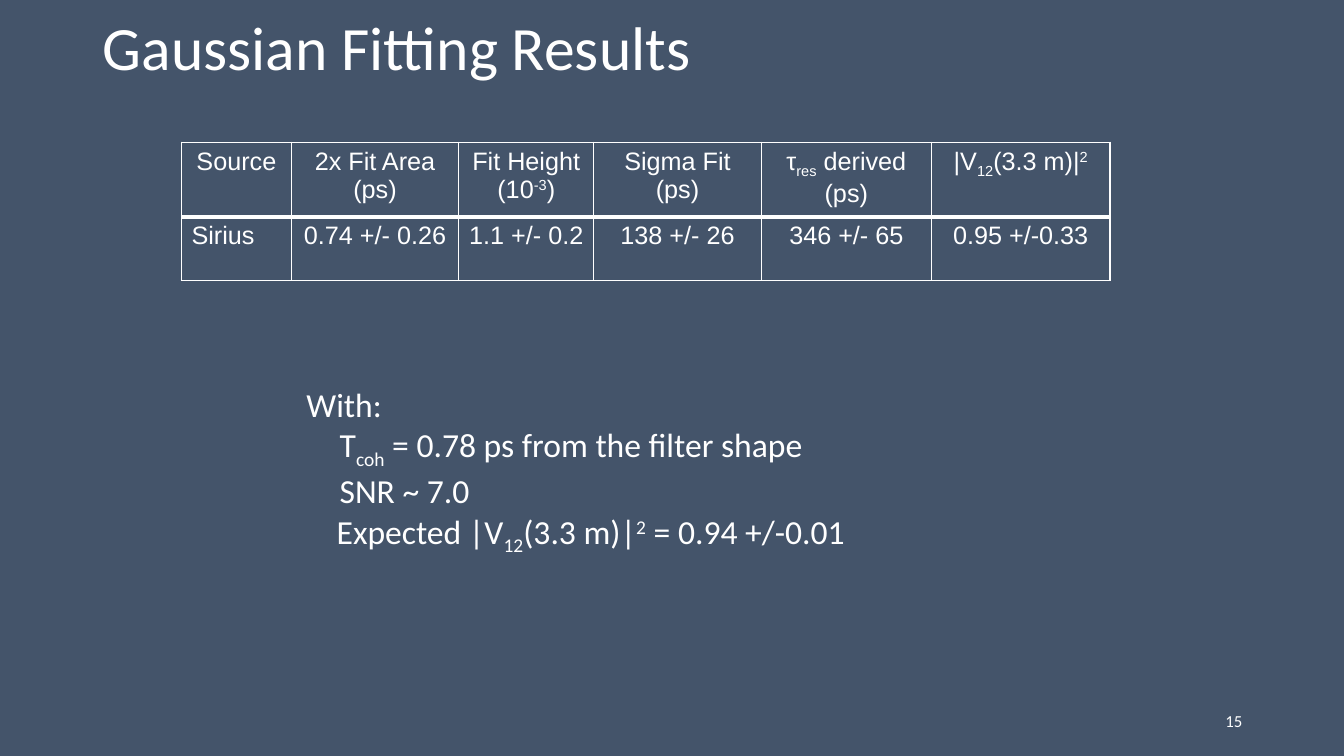
from lxml.etree import SubElement, fromstring
from pptx import Presentation
from pptx.dml.color import RGBColor
from pptx.enum.text import MSO_ANCHOR as Anchor, PP_ALIGN as Align
from pptx.oxml.ns import qn
from pptx.util import Inches, Pt

WHITE = "FFFFFF"
SUB, SUPER = -25000, 30000
VISIBILITY = ["|V", ("12", SUB), "(3.3 m)|", ("2", SUPER)]


def color(value):
    return RGBColor.from_string(value)


def write(paragraph, text, size=18, font="Calibri", align=Align.LEFT, indent=0, spacing=None):
    paragraph.alignment = align
    paragraph.line_spacing = spacing
    if indent:
        properties = paragraph._p.get_or_add_pPr()
        properties.set("marL", str(Inches(indent)))
        properties.set("indent", "0")
    for part in [text] if isinstance(text, str) else text:
        content, baseline = (part, 0) if isinstance(part, str) else part
        run = paragraph.add_run()
        run.text = content
        run.font.size = Pt(size)
        run.font.name = font
        run.font.bold = False
        run.font.color.rgb = color(WHITE)
        if baseline:
            run.font._element.set("baseline", str(baseline))


class ResultsSlide:
    def __init__(self, presentation, background):
        self.slide = presentation.slides.add_slide(presentation.slide_layouts[5])
        fill = self.slide.background.fill
        fill.solid()
        fill.fore_color.rgb = color(background)

    def title(self, text, left, top, width, height):
        shape = self.slide.shapes.title
        shape.left, shape.top = Inches(left), Inches(top)
        shape.width, shape.height = Inches(width), Inches(height)
        shape.text_frame.vertical_anchor = Anchor.MIDDLE
        write(shape.text_frame.paragraphs[0], text, size=44, spacing=0.9)

    def text(self, lines, left, top, width, height, anchor=Anchor.TOP, **style):
        box = self.slide.shapes.add_textbox(
            Inches(left), Inches(top), Inches(width), Inches(height))
        frame = box.text_frame
        frame.word_wrap = True
        frame.vertical_anchor = anchor
        for index, (line, indent) in enumerate(lines):
            paragraph = frame.add_paragraph() if index else frame.paragraphs[0]
            write(paragraph, line, indent=indent, **style)

    def borders(self, cell, **widths):
        properties = cell._tc.get_or_add_tcPr()
        for index, side in enumerate("LRTB"):
            line = properties.makeelement(
                qn(f"a:ln{side}"), {"w": str(Pt(widths.get(side, 1)))})
            fill = SubElement(line, qn("a:solidFill"))
            SubElement(fill, qn("a:srgbClr"), val=WHITE)
            properties.insert(index, line)

    def table(self, rows, left, top, widths, heights):
        table = self.slide.shapes.add_table(
            len(rows), len(widths), Inches(left), Inches(top),
            Inches(sum(widths)), Inches(sum(heights))).table
        table.first_row = table.horz_banding = False
        for column, width in zip(table.columns, widths):
            column.width = Inches(width)
        for row, height in zip(table.rows, heights):
            row.height = Inches(height)
        for row_index, row in enumerate(rows):
            for column_index, text in enumerate(row):
                cell = table.cell(row_index, column_index)
                cell.fill.background()
                self.borders(cell, **({"T": 3} if row_index else {"B": 3}))
                align = Align.LEFT if text == "Sirius" else Align.CENTER
                write(cell.text_frame.paragraphs[0], text, font="Arial", align=align)


def main():
    presentation = Presentation()
    presentation.slide_width = Inches(13.33)
    presentation.slide_height = Inches(7.5)
    results = ResultsSlide(presentation, "44546A")
    results.title("Gaussian Fitting Results", 0.92, 0, 11.5, 1)
    results.text([("15", 0)], 9.42, 6.95, 3, 0.4,
                 anchor=Anchor.MIDDLE, size=12, align=Align.RIGHT)
    results.table([
        ["Source", "2x Fit Area (ps)", ["Fit Height (10", ("-3", SUPER), ")"],
         "Sigma Fit (ps)", ["τ", ("res", SUB), " derived (ps)"], VISIBILITY],
        ["Sirius", "0.74 +/- 0.26", "1.1 +/- 0.2", "138 +/- 26",
         "346 +/- 65", "0.95 +/-0.33"],
    ], 1.8, 1.41, [1.09, 1.66, 1.34, 1.66, 1.69, 1.77], [0.7, 0.63])
    results.text([
        ("With:", 0),
        (["T", ("coh", SUB), " = 0.78 ps from the filter shape"], 0.33),
        ("SNR ~ 7.0", 0.33),
        (["Expected ", *VISIBILITY, " = 0.94 +/-0.01"], 0.3),
    ], 2.94, 3.76, 5.79, 1.72, size=24)
    presentation.save("out.pptx")


if __name__ == "__main__":
    main()
